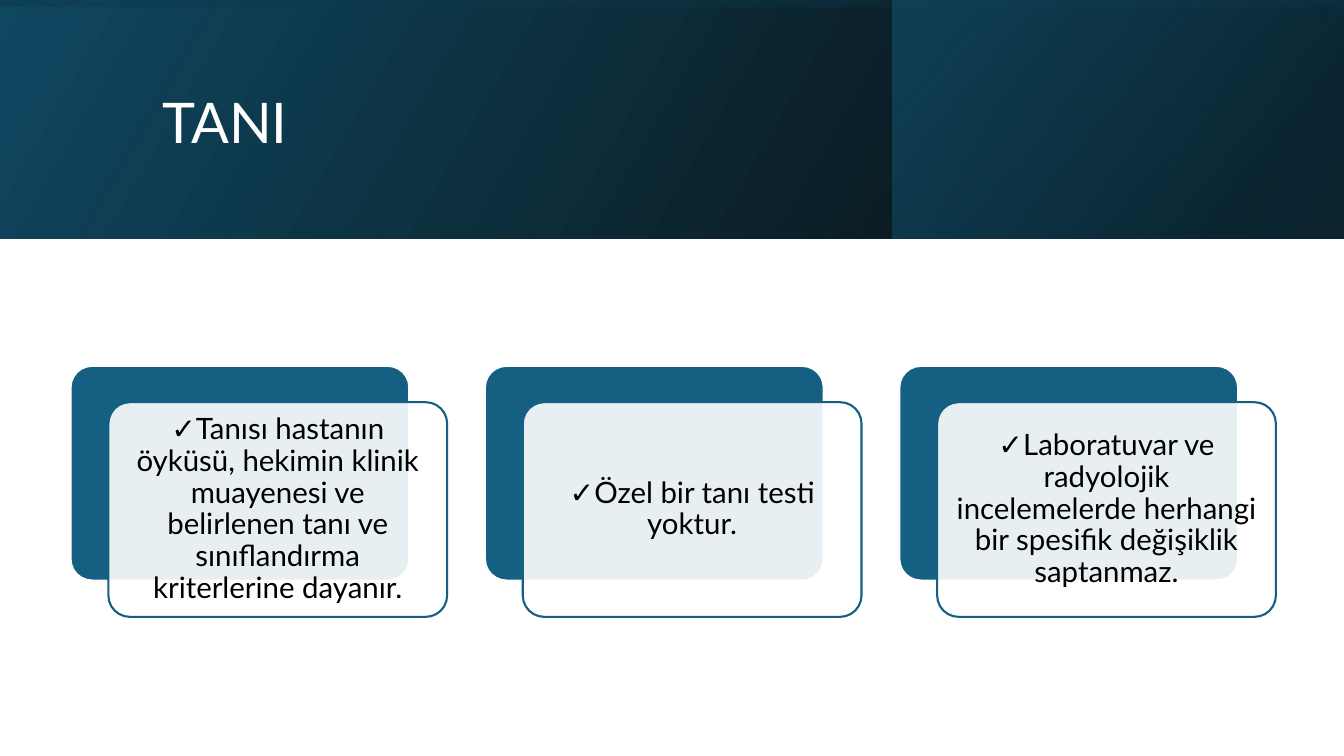
from lxml import etree
from pptx import Presentation
from pptx.dml.color import RGBColor
from pptx.enum.shapes import MSO_SHAPE as Kind
from pptx.enum.text import MSO_ANCHOR as Anchor, PP_ALIGN as Align
from pptx.oxml.ns import qn
from pptx.util import Inches, Pt

TITLE = "TANI"
CARDS = [
    "✓Tanısı hastanın öyküsü, hekimin klinik muayenesi ve belirlenen tanı ve sınıflandırma kriterlerine dayanır.",
    "✓Özel bir tanı testi yoktur.",
    "✓Laboratuvar ve radyolojik incelemelerde herhangi bir spesifik değişiklik saptanmaz.",
]
WIDE, HIGH, BAND = 13.33, 7.5, 2.37
SIDE = 4.48
MID = (WIDE - BAND) / 2
LAYERS = [
    ((0, 0, WIDE, BAND), 0, 330, [(0, "000000", 96), (100, "104862", 100)]),
    ((WIDE - SIDE, 0, SIDE, BAND), 0, 320, [(19, "0B3041", 68), (100, "156082", 48)]),
    ((MID, -MID, BAND, WIDE), 270, 350, [(23, "104862", 16), (99, "000000", 45)]),
]
LEFT, TOP, STEP = 0.7, 3.63, 4.11
CARD_W, CARD_H = 3.36, 2.13
SHIFT_X, SHIFT_Y = 0.375, 0.36
BLUE, WHITE, BLACK = "156082", "FFFFFF", "000000"


def color(code):
    return RGBColor.from_string(code)


def add_alpha(node, share):
    etree.SubElement(node, qn("a:alpha")).set("val", str(share * 1000))


def add_shape(kind, box):
    shape = slide.shapes.add_shape(kind, *map(Inches, box))
    shape.shadow.inherit = False
    return shape


def add_layer(box, turn, angle, stops):
    shape = add_shape(Kind.RECTANGLE, box)
    shape.line.fill.background()
    shape.rotation = turn
    props = shape._element.spPr
    props.find(qn("a:xfrm")).set("flipH", "1")
    shape.fill.gradient()
    grad = props.find(qn("a:gradFill"))
    for child in list(grad):
        grad.remove(child)
    group = etree.SubElement(grad, qn("a:gsLst"))
    for place, code, share in stops:
        stop = etree.SubElement(group, qn("a:gs"), pos=str(place * 1000))
        add_alpha(etree.SubElement(stop, qn("a:srgbClr"), val=code), share)
    etree.SubElement(grad, qn("a:lin"), ang=str(angle * 60000), scaled="0")


def add_panel(x, y, fill, line):
    shape = add_shape(Kind.ROUNDED_RECTANGLE, (x, y, CARD_W, CARD_H))
    shape.adjustments[0] = 0.1
    shape.fill.solid()
    shape.fill.fore_color.rgb = color(fill)
    shape.line.color.rgb = color(line)
    shape.line.width = Pt(1.5)
    return shape


def write(shape, text, size, code, align):
    frame = shape.text_frame
    frame.word_wrap = True
    frame.vertical_anchor = Anchor.MIDDLE
    para = frame.paragraphs[0]
    para.alignment = align
    para.line_spacing = 0.9
    run = para.add_run()
    run.text = text
    run.font.name = "Lato"
    run.font.size = Pt(size)
    run.font.color.rgb = color(code)
    return frame


deck = Presentation()
deck.slide_width, deck.slide_height = Inches(WIDE), Inches(HIGH)
slide = deck.slides.add_slide(deck.slide_layouts[6])

for layer in LAYERS:
    add_layer(*layer)

title = slide.shapes.add_textbox(*map(Inches, (1.51, 0.38, 10.63, 1.72)))
write(title, TITLE, 40, WHITE, Align.LEFT)

for col, text in enumerate(CARDS):
    x = LEFT + col * STEP
    add_panel(x, TOP, BLUE, WHITE)
    card = add_panel(x + SHIFT_X, TOP + SHIFT_Y, WHITE, BLUE)
    add_alpha(card._element.spPr.find(qn("a:solidFill"))[0], 90)
    frame = write(card, text, 21, BLACK, Align.CENTER)
    frame.margin_left = frame.margin_right = Inches(0.09)
    frame.margin_top = frame.margin_bottom = Inches(0.09)

deck.save("out.pptx")
